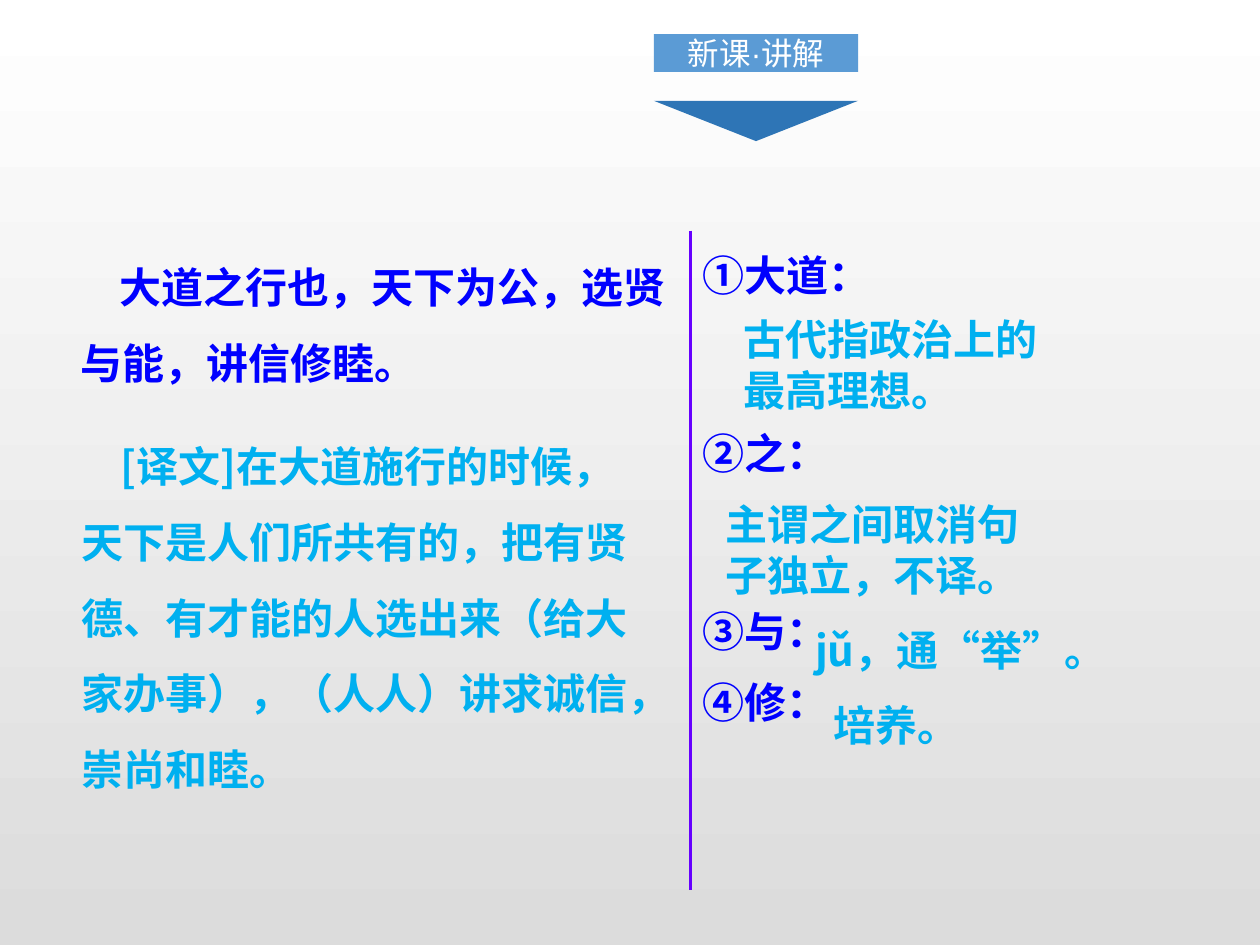
from lxml import etree
from pptx import Presentation
from pptx.dml.color import RGBColor
from pptx.enum.shapes import MSO_CONNECTOR, MSO_SHAPE
from pptx.enum.text import MSO_ANCHOR, MSO_AUTO_SIZE, PP_ALIGN
from pptx.oxml.ns import qn
from pptx.util import Inches, Pt

STRAIGHT = MSO_CONNECTOR.STRAIGHT
TRIANGLE = MSO_SHAPE.ISOSCELES_TRIANGLE
MIDDLE = MSO_ANCHOR.MIDDLE
NO_AUTOFIT = MSO_AUTO_SIZE.NONE
CENTER = PP_ALIGN.CENTER

COLORS = {
    "top": "FFFFFF",
    "bottom": "DCDCDC",
    "divider": "6600FF",
    "classic": "0000FF",
    "meaning": "00B0F0",
    "banner": "5B9BD5",
    "arrow": "2E75B6",
    "heading": "FFFFFF",
}
CJK_FONT = "Noto Sans CJK SC"


def style(paragraph, color, size=24, bold=True, latin=CJK_FONT):
    for run in paragraph.runs:
        run.font.size = Pt(size)
        run.font.bold = bold
        run.font.color.rgb = RGBColor.from_string(COLORS[color])
        run.font.name = latin
        east_asian = etree.SubElement(run.font._element, qn("a:ea"))
        east_asian.set("typeface", CJK_FONT)


def add_text(slide, box, lines, color):
    frame = slide.shapes.add_textbox(*map(Inches, box)).text_frame
    frame.word_wrap = True
    frame.text = "\n".join(lines)
    for paragraph in frame.paragraphs:
        style(paragraph, color)
    return frame.paragraphs


prs = Presentation()
prs.slide_width, prs.slide_height = Inches(10), Inches(7.5)
slide = prs.slides.add_slide(prs.slide_layouts[5])

backdrop = slide.background.fill
backdrop.gradient()
backdrop.gradient_angle = 270
for stop, position, color in zip(backdrop.gradient_stops, (0, 1), ("top", "bottom")):
    stop.position = position
    stop.color.rgb = RGBColor.from_string(COLORS[color])

divider = slide.shapes.add_connector(
    STRAIGHT, Inches(5.48), Inches(1.83), Inches(5.48), Inches(7.06))
divider.line.color.rgb = RGBColor.from_string(COLORS["divider"])
divider.line.width = Pt(2.25)
etree.SubElement(divider._element.spPr, qn("a:effectLst"))

passages = [
    ((0.54, 1.83, 4.93, 1.31), "大道之行也，天下为公，选贤与能，讲信修睦。", "classic"),
    ((0.55, 3.25, 4.75, 3.13),
     "[译文]在大道施行的时候，天下是人们所共有的，把有贤德、有才能的人选出来"
     "（给大家办事），（人人）讲求诚信，崇尚和睦。", "meaning"),
]
for box, passage, color in passages:
    paragraph = add_text(slide, box, [passage], color)[0]
    paragraph.line_spacing = 1.5
    paragraph._p.get_or_add_pPr().set("indent", str(Inches(0.31)))

terms = add_text(slide, (5.48, 1.93, 1.54, 4.14),
                 ["①大道：", "②之：", "③与：", "④修："], "classic")
for term, gap in zip(terms, (0, 73, 73, 12)):
    term.space_before = Pt(gap)

meanings = [
    ((5.8, 2.44, 2.79, 0.91), "古代指政治上的最高理想。"),
    ((5.66, 3.91, 2.61, 0.91), "主谓之间取消句子独立，不译。"),
    ((6.37, 4.91, 2.49, 0.5), "jǔ，通“举”。"),
    ((6.52, 5.5, 1.35, 0.5), "培养。"),
]
for box, meaning in meanings:
    add_text(slide, box, [meaning], "meaning")

heading = slide.shapes.title
heading.left, heading.top = Inches(5.19), Inches(0.27)
heading.width, heading.height = Inches(1.62), Inches(0.3)
heading.fill.solid()
heading.fill.fore_color.rgb = RGBColor.from_string(COLORS["banner"])
heading_frame = heading.text_frame
heading_frame.text = "新课·讲解"
heading_frame.auto_size = NO_AUTOFIT
heading_frame.vertical_anchor = MIDDLE
heading_frame.margin_left = heading_frame.margin_right = 0
heading_frame.margin_top = heading_frame.margin_bottom = 0
heading_frame.paragraphs[0].alignment = CENTER
style(heading_frame.paragraphs[0], "heading", size=18, bold=False, latin="Arial")

arrow = slide.shapes.add_shape(
    TRIANGLE, Inches(5.19), Inches(0.8), Inches(1.62), Inches(0.32))
arrow.rotation = 180
arrow.shadow.inherit = False
arrow.fill.solid()
arrow.fill.fore_color.rgb = RGBColor.from_string(COLORS["arrow"])
arrow.line.fill.background()

prs.save("out.pptx")
